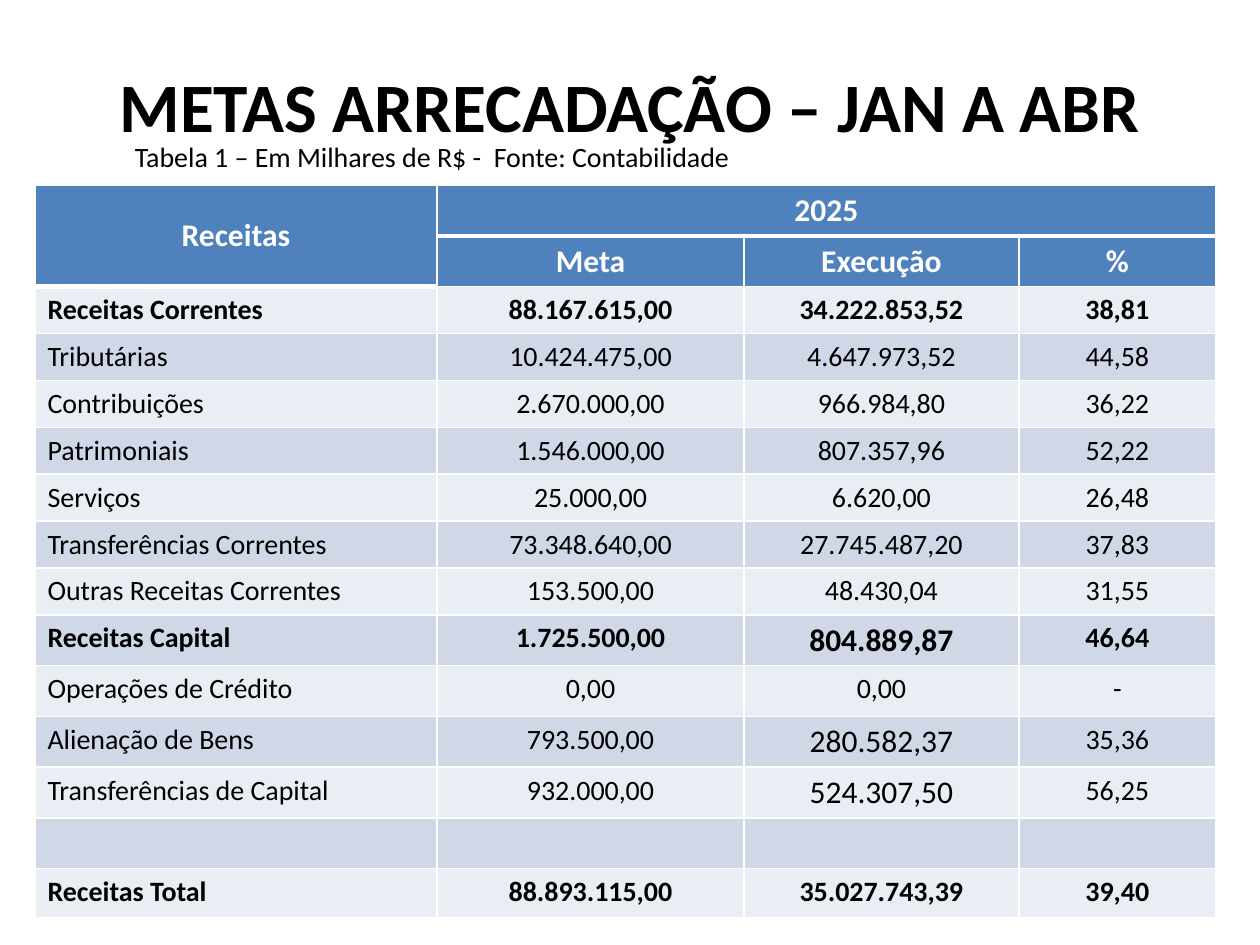
from lxml.etree import SubElement
from pptx import Presentation
from pptx.dml.color import RGBColor
from pptx.enum.text import MSO_ANCHOR as Anchor, PP_ALIGN as Align
from pptx.oxml.ns import qn
from pptx.util import Pt

COLORS = {"header": "4F81BD", "light": "E9EDF4", "dark": "D0D8E8",
          "white": "FFFFFF", "black": "000000"}
FONT = "Calibri"
COLUMN_WIDTHS = [229.7, 175.5, 157, 112.6]
ROW_HEIGHTS = [29] * 2 + [26.8] * 7 + [29] * 5 + [28]
HEADER_ROWS = 2
HEADINGS = ["Meta", "Execução", "%"]
REVENUES = [
    ("Receitas Correntes", "88.167.615,00", "34.222.853,52", "38,81"),
    ("Tributárias", "10.424.475,00", "4.647.973,52", "44,58"),
    ("Contribuições", "2.670.000,00", "966.984,80", "36,22"),
    ("Patrimoniais", "1.546.000,00", "807.357,96", "52,22"),
    ("Serviços", "25.000,00", "6.620,00", "26,48"),
    ("Transferências Correntes", "73.348.640,00", "27.745.487,20", "37,83"),
    ("Outras Receitas Correntes", "153.500,00", "48.430,04", "31,55"),
    ("Receitas Capital", "1.725.500,00", "804.889,87", "46,64"),
    ("Operações de Crédito", "0,00", "0,00", "-"),
    ("Alienação de Bens", "793.500,00", "280.582,37", "35,36"),
    ("Transferências de Capital", "932.000,00", "524.307,50", "56,25"),
    ("", "", "", ""),
    ("Receitas Total", "88.893.115,00", "35.027.743,39", "39,40"),
]
BOLD_REVENUES = {"Receitas Correntes", "Receitas Capital", "Receitas Total"}
LARGE_VALUES = {"804.889,87", "280.582,37", "524.307,50"}


def write_text(frame, text, size=16, color="black", bold=False, align=Align.LEFT):
    paragraph = frame.paragraphs[0]
    paragraph.alignment = align
    run = paragraph.add_run()
    run.text = text
    run.font.name = FONT
    run.font.size = Pt(size)
    run.font.bold = bold
    run.font.color.rgb = RGBColor.from_string(COLORS[color])


def add_label(slide, box, text, anchor=Anchor.TOP, **text_format):
    frame = slide.shapes.add_textbox(*map(Pt, box)).text_frame
    frame.word_wrap = True
    frame.vertical_anchor = anchor
    write_text(frame, text, **text_format)


def style_cell(cell, fill, top=1, bottom=1):
    properties = cell._tc.get_or_add_tcPr()
    for side, width in (("L", 1), ("R", 1), ("T", top), ("B", bottom)):
        line = SubElement(properties, qn(f"a:ln{side}"), w=str(Pt(width)))
        solid = SubElement(line, qn("a:solidFill"))
        SubElement(solid, qn("a:srgbClr"), val=COLORS["white"])
    cell.fill.solid()
    cell.fill.fore_color.rgb = RGBColor.from_string(COLORS[fill])


def fill_header(table):
    for column in range(len(COLUMN_WIDTHS)):
        style_cell(table.cell(0, column), "header", bottom=3)
        if column:
            style_cell(table.cell(1, column), "header", top=3)
        else:
            style_cell(table.cell(1, column), "header", bottom=3)
    table.cell(0, 0).merge(table.cell(1, 0))
    table.cell(0, 1).merge(table.cell(0, 3))
    table.cell(0, 0).vertical_anchor = Anchor.MIDDLE
    titles = [(0, 0, "Receitas"), (0, 1, "2025")]
    titles += [(1, column, text) for column, text in enumerate(HEADINGS, 1)]
    for row, column, text in titles:
        write_text(table.cell(row, column).text_frame, text, size=18,
                   color="white", bold=True, align=Align.CENTER)


def fill_revenues(table):
    for index, revenue in enumerate(REVENUES):
        for column, text in enumerate(revenue):
            cell = table.cell(index + HEADER_ROWS, column)
            style_cell(cell, "dark" if index % 2 else "light",
                       top=3 if index == column == 0 else 1)
            if text:
                write_text(cell.text_frame, text,
                           size=18 if text in LARGE_VALUES else 16,
                           bold=revenue[0] in BOLD_REVENUES,
                           align=Align.CENTER if column else Align.LEFT)


def add_revenue_table(slide, box):
    table = slide.shapes.add_table(
        len(ROW_HEIGHTS), len(COLUMN_WIDTHS), *map(Pt, box)).table
    for column, width in zip(table.columns, COLUMN_WIDTHS):
        column.width = Pt(width)
    for row, height in zip(table.rows, ROW_HEIGHTS):
        row.height = Pt(height)
    fill_header(table)
    fill_revenues(table)


def add_heading(slide, box):
    left, top, width, height = box
    add_label(slide, box, "METAS ARRECADAÇÃO – JAN A ABR", anchor=Anchor.MIDDLE,
              size=39.6, bold=True, align=Align.CENTER)
    add_label(slide, (left + 34, top + 61, width, 27),
              "Tabela 1 – Em Milhares de R$ -  Fonte: Contabilidade")


def main():
    presentation = Presentation()
    presentation.slide_width = Pt(720)
    presentation.slide_height = Pt(540)
    slide = presentation.slides.add_slide(presentation.slide_layouts[6])
    add_heading(slide, (36, 15.1, 648, 90))
    add_revenue_table(slide, (20, 105.8, sum(COLUMN_WIDTHS), sum(ROW_HEIGHTS)))
    presentation.save("out.pptx")


if __name__ == "__main__":
    main()
